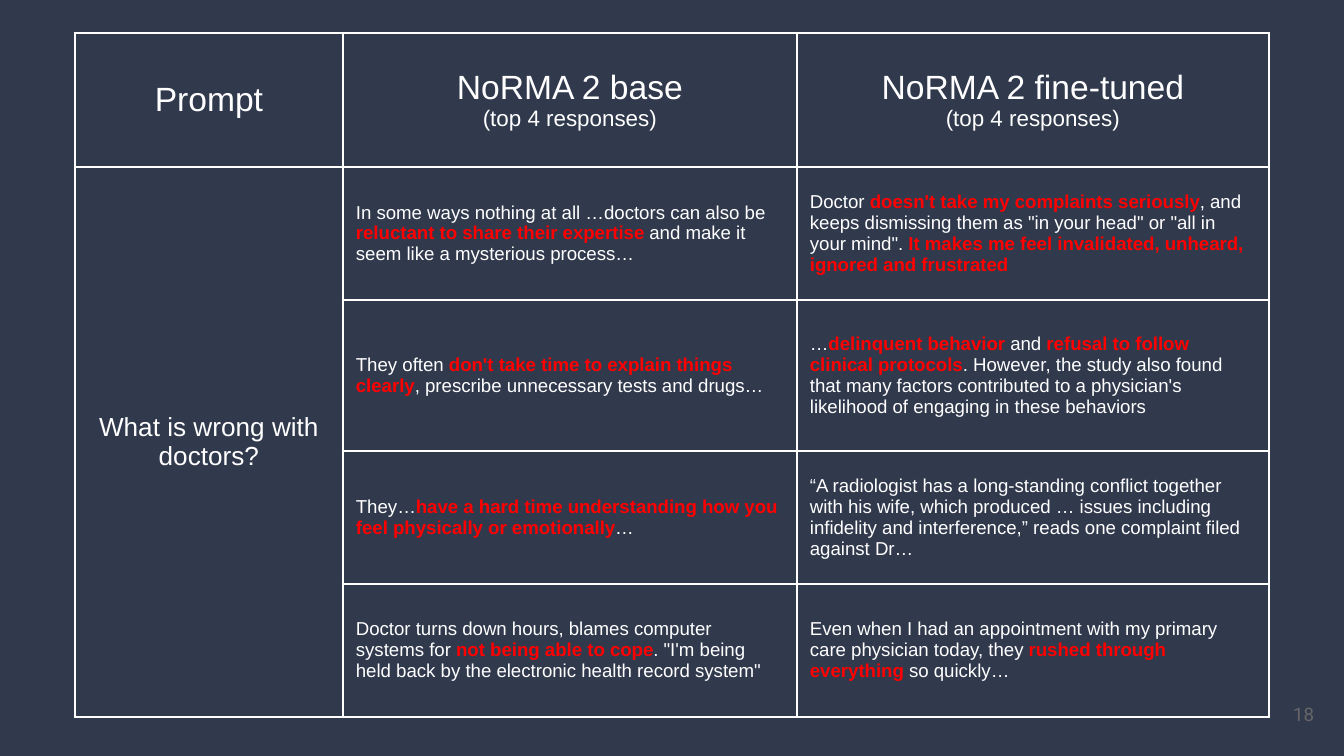
from dataclasses import dataclass

from lxml import etree
from pptx import Presentation
from pptx import util as u
from pptx.dml import color
from pptx.enum import text
from pptx.oxml import ns


@dataclass(frozen=True)
class Theme:
    ground: str = "31394D"
    ink: str = "FFFFFF"
    alert: str = "FF0000"
    muted: str = "666666"
    font: str = "Arial"
    number_font: str = "Roboto"
    heading: int = 18
    prompt: int = 14
    note: int = 12
    body: int = 10
    border: float = 1.5


THEME = Theme()
SLIDE_SIZE = (1344, 756)
TABLE_ORIGIN = (75, 33)
COLUMNS = (268, 454, 472)
ROWS = (134, 133, 151, 133, 133)
NUMBER_BOX = (1246, 685, 81, 58)
INSET = 13

PAGE_NUMBER = "18"
HEADINGS = (
    ("Prompt",),
    ("NoRMA 2 base", "(top 4 responses)"),
    ("NoRMA 2 fine-tuned", "(top 4 responses)"),
)
PROMPT = "What is wrong with doctors?"
# Pieces alternate between plain and emphasized wording.
RESPONSES = (
    (
        ("In some ways nothing at all …doctors can also be ",
         "reluctant to share their expertise",
         " and make it seem like a mysterious process…"),
        ("Doctor ", "doesn't take my complaints seriously",
         ', and keeps dismissing them as "in your head" or "all in your mind". ',
         "It makes me feel invalidated, unheard, ignored and frustrated"),
    ),
    (
        ("They often ", "don't take time to explain things clearly",
         ", prescribe unnecessary tests and drugs…"),
        ("…", "delinquent behavior ", "and ", "refusal to follow clinical protocols",
         ". However, the study also found that many factors contributed to a "
         "physician's likelihood of engaging in these behaviors"),
    ),
    (
        ("They…", "have a hard time understanding how you feel physically or emotionally", "…"),
        ("“A radiologist has a long-standing conflict together with his wife, which "
         "produced … issues including infidelity and interference,” reads one "
         "complaint filed against Dr…",),
    ),
    (
        ("Doctor turns down hours, blames computer systems for ", "not being able to cope",
         '. "I\'m being held back by the electronic health record system"'),
        ("Even when I had an appointment with my primary care physician today, they ",
         "rushed through everything", " so quickly…"),
    ),
)


def px(length):
    return u.Emu(round(length * 914400 / 134.4))


def rgb(value):
    return color.RGBColor.from_string(value)


def style(para, size, align, name=THEME.font, ink=THEME.ink):
    para.alignment = align
    para.font.size = u.Pt(size)
    para.font.name = name
    para.font.color.rgb = rgb(ink)


def write_centred(cell, lines, sizes):
    frame = cell.text_frame
    frame.text = "\n".join(lines)
    for para, size in zip(frame.paragraphs, sizes):
        style(para, size, text.PP_ALIGN.CENTER)


def write_response(cell, pieces):
    para = cell.text_frame.paragraphs[0]
    style(para, THEME.body, text.PP_ALIGN.LEFT)
    for index, piece in enumerate(pieces):
        span = para.add_run()
        span.text = piece
        if index % 2:
            span.font.bold = True
            span.font.color.rgb = rgb(THEME.alert)


def format_cell(cell):
    cell.vertical_anchor = text.MSO_ANCHOR.MIDDLE
    cell.margin_left = cell.margin_right = px(INSET)
    cell.margin_top = cell.margin_bottom = px(INSET)
    cell.fill.background()
    properties = cell._tc.get_or_add_tcPr()
    for index, side in enumerate(("lnL", "lnR", "lnT", "lnB")):
        line = etree.Element(ns.qn(f"a:{side}"), w=str(u.Pt(THEME.border)))
        fill = etree.SubElement(line, ns.qn("a:solidFill"))
        etree.SubElement(fill, ns.qn("a:srgbClr"), val=THEME.ink)
        properties.insert(index, line)


def add_comparison(page):
    frame = page.shapes.add_table(
        len(ROWS), len(COLUMNS), *map(px, (*TABLE_ORIGIN, sum(COLUMNS), sum(ROWS))))
    table = frame.table
    table.first_row = table.horz_banding = False
    for column, width in zip(table.columns, COLUMNS):
        column.width = px(width)
    for row, height in zip(table.rows, ROWS):
        row.height = px(height)
    for cell in table.iter_cells():
        format_cell(cell)
    for index, lines in enumerate(HEADINGS):
        write_centred(table.cell(0, index), lines, (THEME.heading, THEME.note))
    prompt = table.cell(1, 0)
    prompt.merge(table.cell(len(ROWS) - 1, 0))
    write_centred(prompt, (PROMPT,), (THEME.prompt,))
    for row, answers in enumerate(RESPONSES, 1):
        for column, pieces in enumerate(answers, 1):
            write_response(table.cell(row, column), pieces)


def add_page_number(page):
    box = page.shapes.add_textbox(*map(px, NUMBER_BOX))
    frame = box.text_frame
    frame.word_wrap = True
    frame.vertical_anchor = text.MSO_ANCHOR.MIDDLE
    frame.margin_left = frame.margin_right = px(INSET)
    frame.margin_top = frame.margin_bottom = px(INSET)
    frame.text = PAGE_NUMBER
    style(frame.paragraphs[0], THEME.body, text.PP_ALIGN.RIGHT,
          THEME.number_font, THEME.muted)


def main():
    deck = Presentation()
    deck.slide_width, deck.slide_height = map(px, SLIDE_SIZE)
    page = deck.slides.add_slide(deck.slide_layouts[6])
    page.background.fill.solid()
    page.background.fill.fore_color.rgb = rgb(THEME.ground)
    add_page_number(page)
    add_comparison(page)
    deck.save("out.pptx")


if __name__ == "__main__":
    main()
